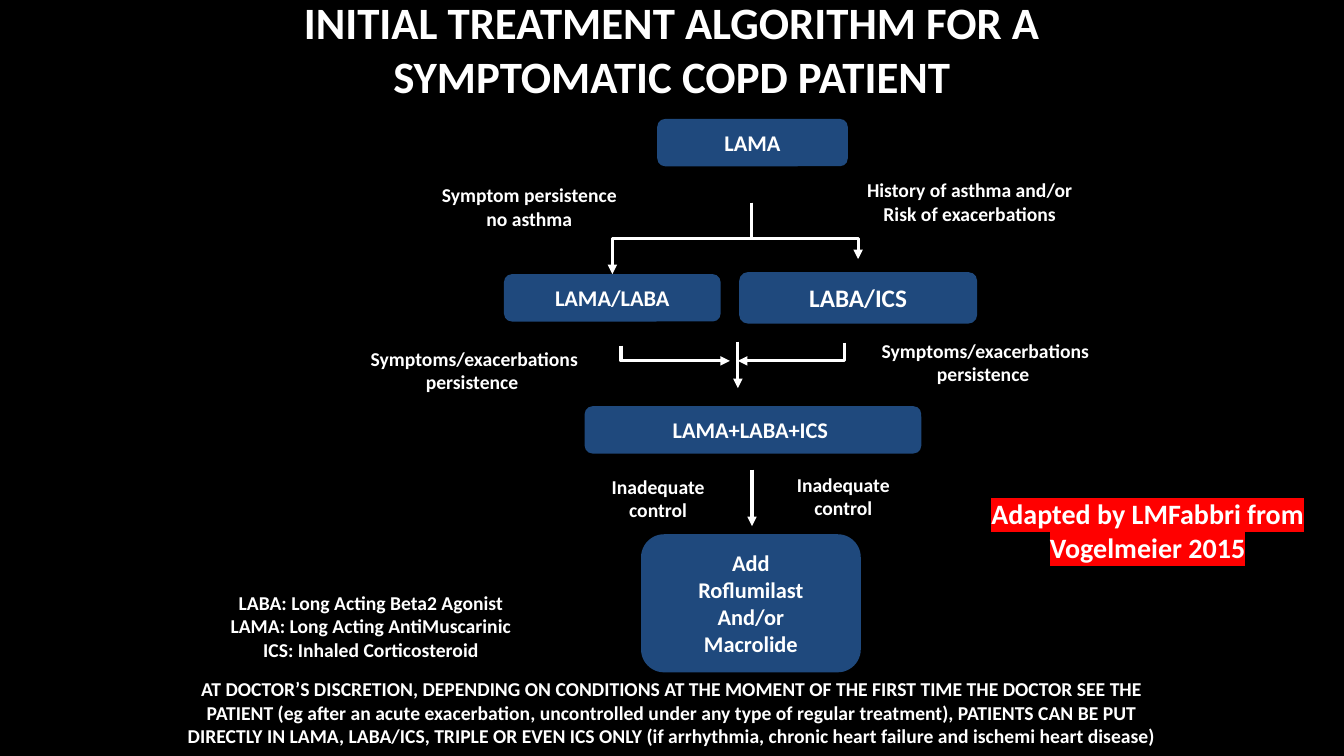
import dataclasses
import pptx
import pptx.dml.color
import pptx.enum.shapes
import pptx.enum.text
import pptx.oxml
import pptx.oxml.ns
import pptx.util

qn = pptx.oxml.ns.qn
Anchor = pptx.enum.text.MSO_ANCHOR
AutoSize = pptx.enum.text.MSO_AUTO_SIZE
Link = pptx.enum.shapes.MSO_CONNECTOR
WIDTH, HEIGHT = pptx.util.Inches(13.33), pptx.util.Inches(7.5)
COLUMNS, ROWS = 100, 100


@dataclasses.dataclass(frozen=True)
class Theme:
    font: str = "Calibri"
    background: str = "000000"
    ink: str = "FFFFFF"
    box: str = "1F497D"
    highlight: str = "FF0000"
    title: int = 32
    credit: int = 20
    large: int = 18
    step: int = 16
    note: int = 14
    line: float = 2.25


THEME = Theme()


@dataclasses.dataclass(frozen=True)
class Box:
    col: float
    row: float
    cols: float
    rows: float

    def point(self, col, row):
        return (int((self.col + col) * WIDTH / COLUMNS),
                int((self.row + row) * HEIGHT / ROWS))

    def area(self, col, row, cols, rows):
        return self.point(col, row) + (int(cols * WIDTH / COLUMNS),
                                       int(rows * HEIGHT / ROWS))


def rgb(value):
    return pptx.dml.color.RGBColor.from_string(value)


def apply(target, formats):
    for name, value in formats.items():
        setattr(target, name, value)


def write(sp, text, size, margins=(0.1, 0.05), anchor=Anchor.TOP,
          auto_size=AutoSize.SHAPE_TO_FIT_TEXT, highlight=None):
    side, edge = map(pptx.util.Inches, margins)
    tf = sp.text_frame
    apply(tf, {"word_wrap": True, "auto_size": auto_size, "vertical_anchor": anchor,
               "margin_left": side, "margin_right": side,
               "margin_top": edge, "margin_bottom": edge})
    tf.text = text
    for p in tf.paragraphs:
        p.alignment = pptx.enum.text.PP_ALIGN.CENTER
        for r in p.runs:
            apply(r.font, {"name": THEME.font, "size": pptx.util.Pt(size), "bold": True})
            r.font.color.rgb = rgb(THEME.ink)
            if highlight:
                mark = pptx.oxml.parse_xml(
                    f'<a:highlight {pptx.oxml.ns.nsdecls("a")}>'
                    f'<a:srgbClr val="{highlight}"/></a:highlight>')
                r.font._element.find(qn("a:solidFill")).addnext(mark)


def add_label(s, area, text, size=THEME.note, **formats):
    write(s.shapes.add_textbox(*area), text, size, **formats)


def add_step(s, area, text, size=THEME.step):
    sp = s.shapes.add_shape(pptx.enum.shapes.MSO_SHAPE.ROUNDED_RECTANGLE, *area)
    sp.shadow.inherit = False
    sp.fill.solid()
    sp.fill.fore_color.rgb = rgb(THEME.box)
    sp.line.fill.background()
    write(sp, text, size, (0.04, 0.08), Anchor.MIDDLE, AutoSize.NONE)
    return sp


def add_arrow(s, start, end, kind=Link.STRAIGHT):
    sp = s.shapes.add_connector(kind, *start, *end)
    sp.line.color.rgb = rgb(THEME.ink)
    sp.line.width = pptx.util.Pt(THEME.line)
    ln = sp.line._get_or_add_ln()
    ln.append(ln.makeelement(qn("a:tailEnd"), {"type": "triangle"}))
    ln.addnext(ln.makeelement(qn("a:effectLst"), {}))
    return sp


def add_elbow(s, start, end, preset, bend=None, target=None):
    sp = add_arrow(s, start, end, Link.ELBOW)
    if target is not None:
        sp.end_connect(target, 0)
    (x1, y1), (x2, y2) = start, end
    across, down = abs(x2 - x1), abs(y2 - y1)
    apply(sp, {"left": (x1 + x2 - down) // 2, "top": (y1 + y2 - across) // 2,
               "width": down, "height": across})
    rightward = x2 > x1
    xfrm = sp._element.spPr.find(qn("a:xfrm"))
    xfrm.set("rot", str((270 if rightward else 90) * 60000))
    xfrm.set("flipH", "1" if rightward else "0")
    geometry = sp._element.spPr.find(qn("a:prstGeom"))
    geometry.set("prst", preset)
    if bend is not None:
        guides = geometry.find(qn("a:avLst"))
        guides.append(guides.makeelement(
            qn("a:gd"), {"name": "adj1", "fmla": f"val {int(bend * 100000)}"}))


def build_header(s, box):
    sp = s.shapes.title
    left, top, width, height = box.area(0, 0, box.cols, box.rows)
    apply(sp, {"left": left, "top": top, "width": width, "height": height})
    write(sp, "INITIAL TREATMENT ALGORITHM FOR A SYMPTOMATIC COPD PATIENT",
          THEME.title, anchor=Anchor.MIDDLE, auto_size=AutoSize.NONE)


def build_flow(s, box):
    add_step(s, box.area(23.9, 0.73, 14.18, 6.27), "LAMA")
    add_step(s, box.area(30, 21, 17.7, 6.8), "LABA/ICS", THEME.large)
    dual = add_step(s, box.area(12.5, 21.27, 16.12, 6.27), "LAMA/LABA")
    add_step(s, box.area(18.5, 38.73, 25.05, 6.27), "LAMA+LABA+ICS ")
    add_step(s, box.area(22.7, 55.67, 16.35, 18.27),
             "Add\nRoflumilast\nAnd/or\nMacrolide")

    persistence = "Symptoms/exacerbations persistence "
    for col, row, cols, text in (
            (5.53, 8.6, 17.7, "Symptom persistence\nno asthma"),
            (37.25, 7.93, 19.8, "History of asthma and/or\nRisk of exacerbations"),
            (0.2, 30.2, 20.18, persistence),
            (37.93, 29.13, 20.78, persistence),
            (18, 47.13, 11.93, "Inadequate control"),
            (31.78, 46.87, 11.93, "Inadequate control")):
        add_label(s, box.area(col, row, cols, 7.6), text)

    fork = box.point(30.9, 11.8)
    add_elbow(s, fork, box.point(20.56, 21.27), "bentConnector3", 0.5, dual)
    add_elbow(s, fork, box.point(38.85, 19.27), "bentConnector3", 0.64)
    for start, end in (((21.2, 30.73), (29.3, 32.73)), ((37.85, 30.33), (29.9, 32.73))):
        add_elbow(s, box.point(*start), box.point(*end), "bentConnector2")
    for col, top, bottom in ((29.9, 30.2, 36.33), (30.95, 47.13, 54.6)):
        add_arrow(s, box.point(col, top), box.point(col, bottom))


def build_notes(s, box):
    add_label(s, box.area(1.45, 12.47, 27.3, 10.8),
              "LABA: Long Acting Beta2 Agonist\nLAMA: Long Acting AntiMuscarinic\n"
              "ICS: Inhaled Corticosteroid")
    add_label(s, box.area(0, 23.93, 75, 10.8),
              "AT DOCTOR’S DISCRETION, DEPENDING ON CONDITIONS AT THE MOMENT OF THE "
              "FIRST TIME THE DOCTOR SEE THE PATIENT (eg after an acute exacerbation, "
              "uncontrolled under any type of regular treatment), PATIENTS CAN BE PUT "
              "DIRECTLY IN LAMA, LABA/ICS, TRIPLE OR EVEN ICS ONLY (if arrhythmia, "
              "chronic heart failure and ischemi heart disease)")
    add_label(s, box.area(60.1, 0.07, 25.58, 10.27),
              "Adapted by LMFabbri from Vogelmeier 2015", THEME.credit,
              highlight=THEME.highlight)


def main():
    prs = pptx.Presentation()
    apply(prs, {"slide_width": WIDTH, "slide_height": HEIGHT})
    s = prs.slides.add_slide(prs.slide_layouts[5])
    s.background.fill.solid()
    s.background.fill.fore_color.rgb = rgb(THEME.background)
    build_header(s, Box(12.5, -2.13, 75, 17.07))
    build_flow(s, Box(25, 15, 60, 75))
    build_notes(s, Box(12.5, 65, 87.5, 35))
    prs.save("out.pptx")


if __name__ == "__main__":
    main()
